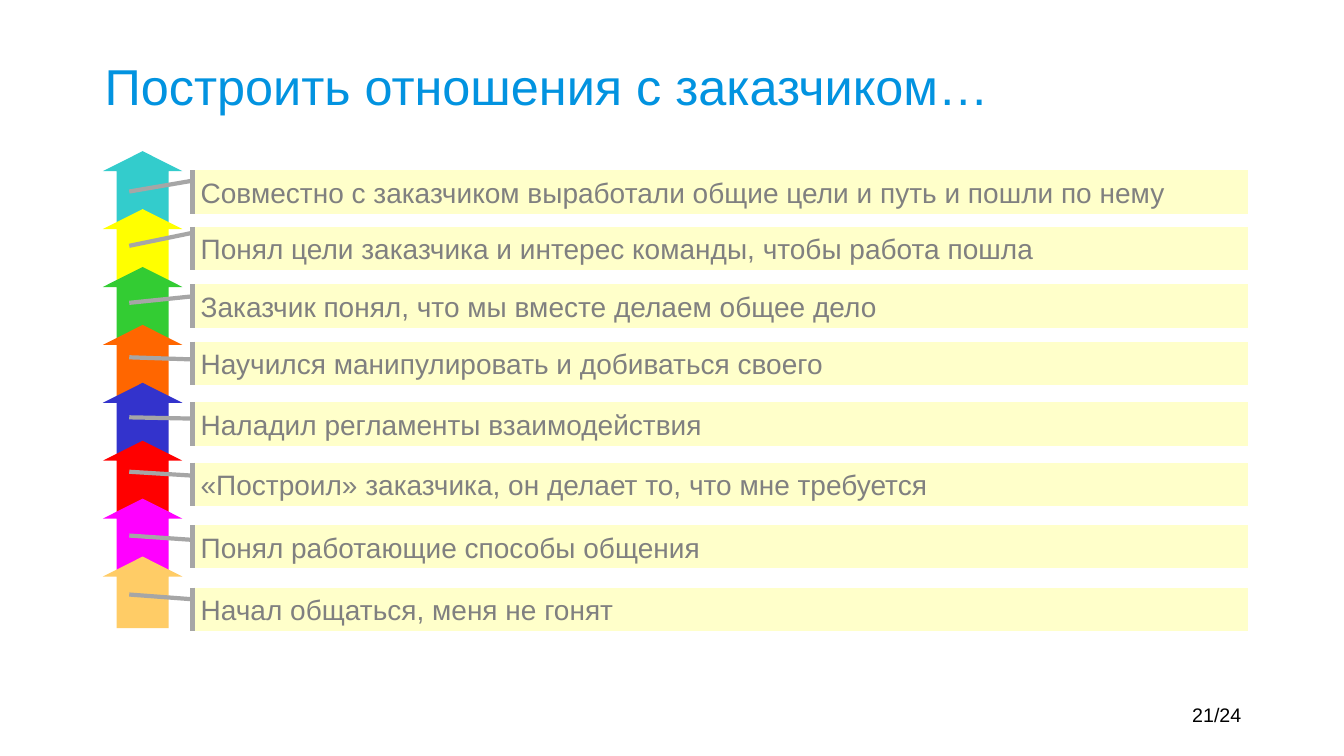
from pptx import Presentation
from pptx.dml.color import RGBColor
from pptx.enum.shapes import MSO_SHAPE as Preset
from pptx.enum.text import MSO_ANCHOR as Anchor, PP_ALIGN as Align
from pptx.util import Inches, Pt

# Slide size; every place below is a percentage of it
WIDTH, HEIGHT = Inches(13.33), Inches(7.5)

BLUE = RGBColor(0x02, 0x93, 0xE0)
BLACK = RGBColor(0x00, 0x00, 0x00)
TEXT_GREY = RGBColor(0x80, 0x80, 0x80)
LINE_GREY = RGBColor(0xA6, 0xA6, 0xA6)
CREAM = RGBColor(0xFF, 0xFF, 0xCA)
TEAL = RGBColor(0x33, 0xCC, 0xCC)
YELLOW = RGBColor(0xFF, 0xFF, 0x00)
GREEN = RGBColor(0x33, 0xCC, 0x33)
ORANGE = RGBColor(0xFF, 0x66, 0x00)
INDIGO = RGBColor(0x33, 0x33, 0xCC)
RED = RGBColor(0xFF, 0x00, 0x00)
MAGENTA = RGBColor(0xFF, 0x00, 0xFF)
SAND = RGBColor(0xFF, 0xCC, 0x66)

ARROW_TOP, ARROW_PITCH = 20, 7.66
ARROW_ADJUSTMENTS = (0.65, 0.28)
CALLOUT_FRAME = {
    "margin_left": Inches(0.08), "margin_right": Inches(0.08),
    "margin_top": Inches(0.02), "margin_bottom": Inches(0.02),
    "vertical_anchor": Anchor.MIDDLE,
}

# Arrow colour, callout top, leader adjustments, wording
STEPS = [
    (TEAL, 22.53, (0.24, 0, 0.49, -0.06),
     "Совместно с заказчиком выработали общие цели и путь и пошли по нему"),
    (YELLOW, 30, (0.14, 0, 0.44, -0.06),
     "Понял цели заказчика и интерес команды, чтобы работа пошла"),
    (GREEN, 37.6, (0.28, 0, 0.43, -0.06),
     "Заказчик понял, что мы вместе делаем общее дело"),
    (ORANGE, 45.2, (0.41, 0, 0.36, -0.06),
     "Научился манипулировать и добиваться своего"),
    (INDIGO, 53.2, (0.38, 0, 0.35, -0.06),
     "Наладил регламенты взаимодействия"),
    (RED, 61.2, (0.3, 0, 0.21, -0.06),
     "«Построил» заказчика, он делает то, что мне требуется"),
    (MAGENTA, 69.47, (0.34, 0, 0.24, -0.06),
     "Понял работающие способы общения"),
    (SAND, 77.73, (0.27, 0, 0.16, -0.06),
     "Начал общаться, меня не гонят"),
]


def place(left, top, width, height):
    """Turn percentages of the slide into lengths."""
    return (int(WIDTH * left / 100), int(HEIGHT * top / 100),
            int(WIDTH * width / 100), int(HEIGHT * height / 100))


def set_all(target, values):
    for name, value in values.items():
        setattr(target, name, value)


def write(shape, text, size, color, frame_format, align=Align.LEFT):
    frame = shape.text_frame
    set_all(frame, {"word_wrap": True, **frame_format})
    paragraph = frame.paragraphs[0]
    paragraph.alignment = align
    run = paragraph.add_run()
    run.text = text
    set_all(run.font, {"name": "Arial", "size": Pt(size)})
    run.font.color.rgb = color


def add_text(slide, box, *text_format):
    write(slide.shapes.add_textbox(*place(*box)), *text_format)


def add_filled(shapes, preset, box, fill, adjustments):
    shape = shapes.add_shape(preset, *place(*box))
    shape.shadow.inherit = False
    shape.fill.solid()
    shape.fill.fore_color.rgb = fill
    for index, value in enumerate(adjustments):
        shape.adjustments[index] = value
    return shape


def add_arrow(shapes, row, color):
    box = (7.65, ARROW_TOP + row * ARROW_PITCH, 5.93, 9.47)
    arrow = add_filled(shapes, Preset.UP_ARROW, box, color, ARROW_ADJUSTMENTS)
    arrow.line.fill.background()


def add_callout(slide, top, leader, text):
    callout = add_filled(slide.shapes, Preset.LINE_CALLOUT_1_ACCENT_BAR,
                         (14.33, top, 78.54, 5.73), CREAM, leader)
    callout.line.color.rgb = LINE_GREY
    callout.line.width = Pt(3)
    write(callout, text, 20, TEXT_GREY, CALLOUT_FRAME)


def main():
    presentation = Presentation()
    set_all(presentation, {"slide_width": WIDTH, "slide_height": HEIGHT})
    slide = presentation.slides.add_slide(presentation.slide_layouts[6])

    # Ladder of arrows, each overlapping the one above
    ladder = slide.shapes.add_group_shape()
    for row, (color, *_) in enumerate(STEPS):
        add_arrow(ladder.shapes, row, color)

    # Title
    add_text(slide, (7.05, 6.27, 86.57, 10),
             "Построить отношения с заказчиком…", 36, BLUE,
             {"vertical_anchor": Anchor.MIDDLE})

    # Step descriptions
    for _, top, leader, text in STEPS:
        add_callout(slide, top, leader, text)

    # Page number
    add_text(slide, (82.3, 92.93, 10.8, 3.87), "21/24", 14, BLACK,
             {"vertical_anchor": Anchor.BOTTOM}, Align.RIGHT)

    presentation.save("out.pptx")


if __name__ == "__main__":
    main()
